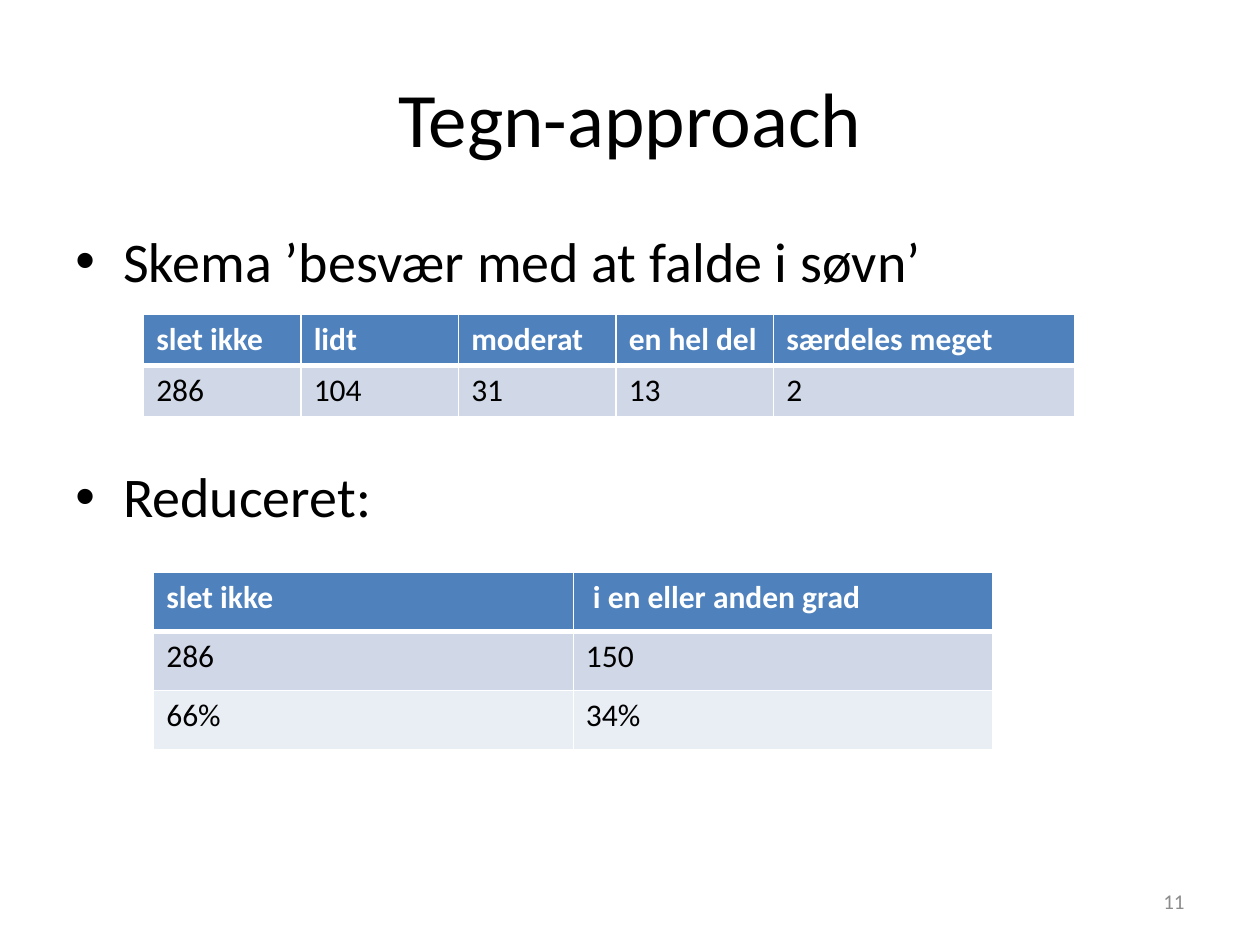
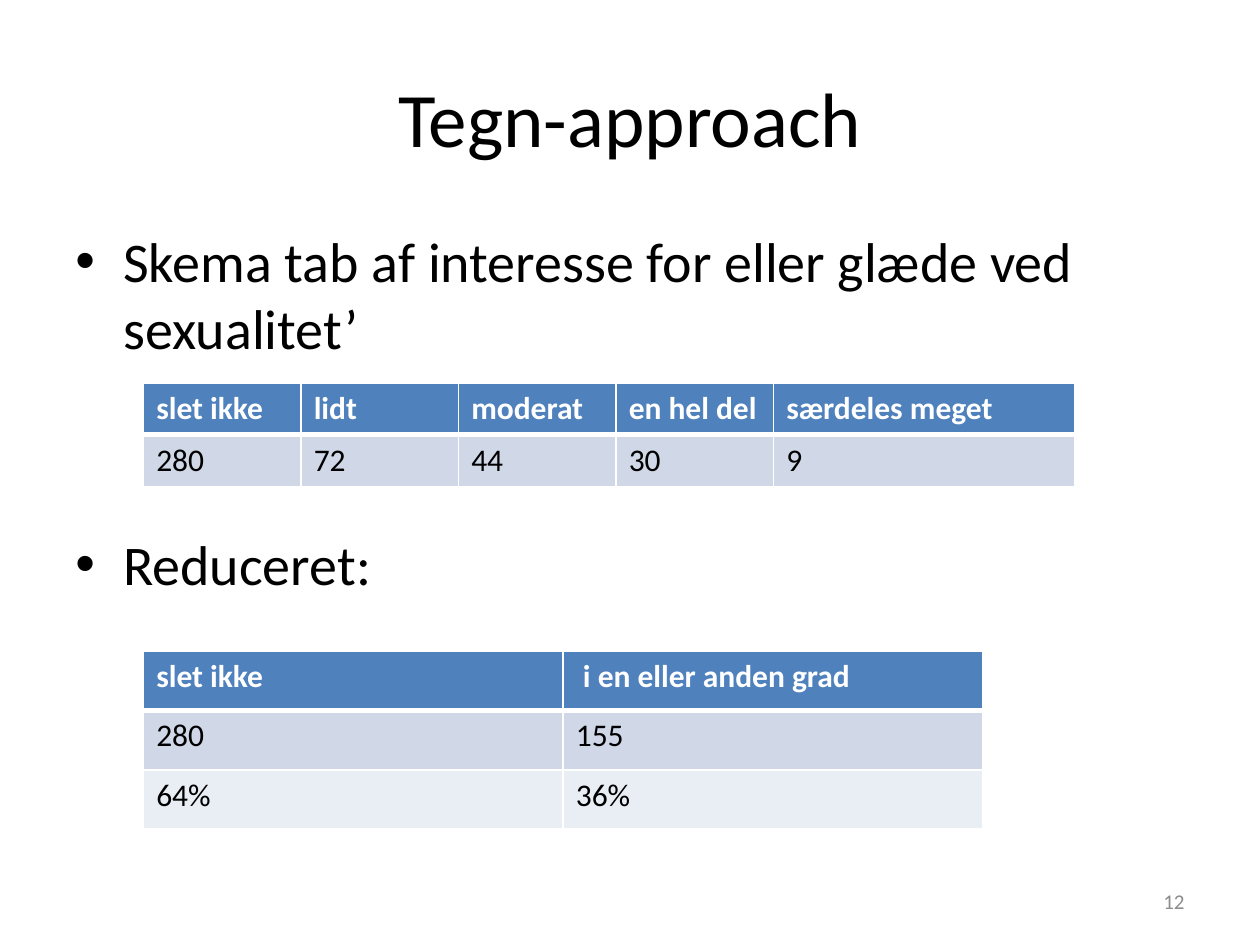
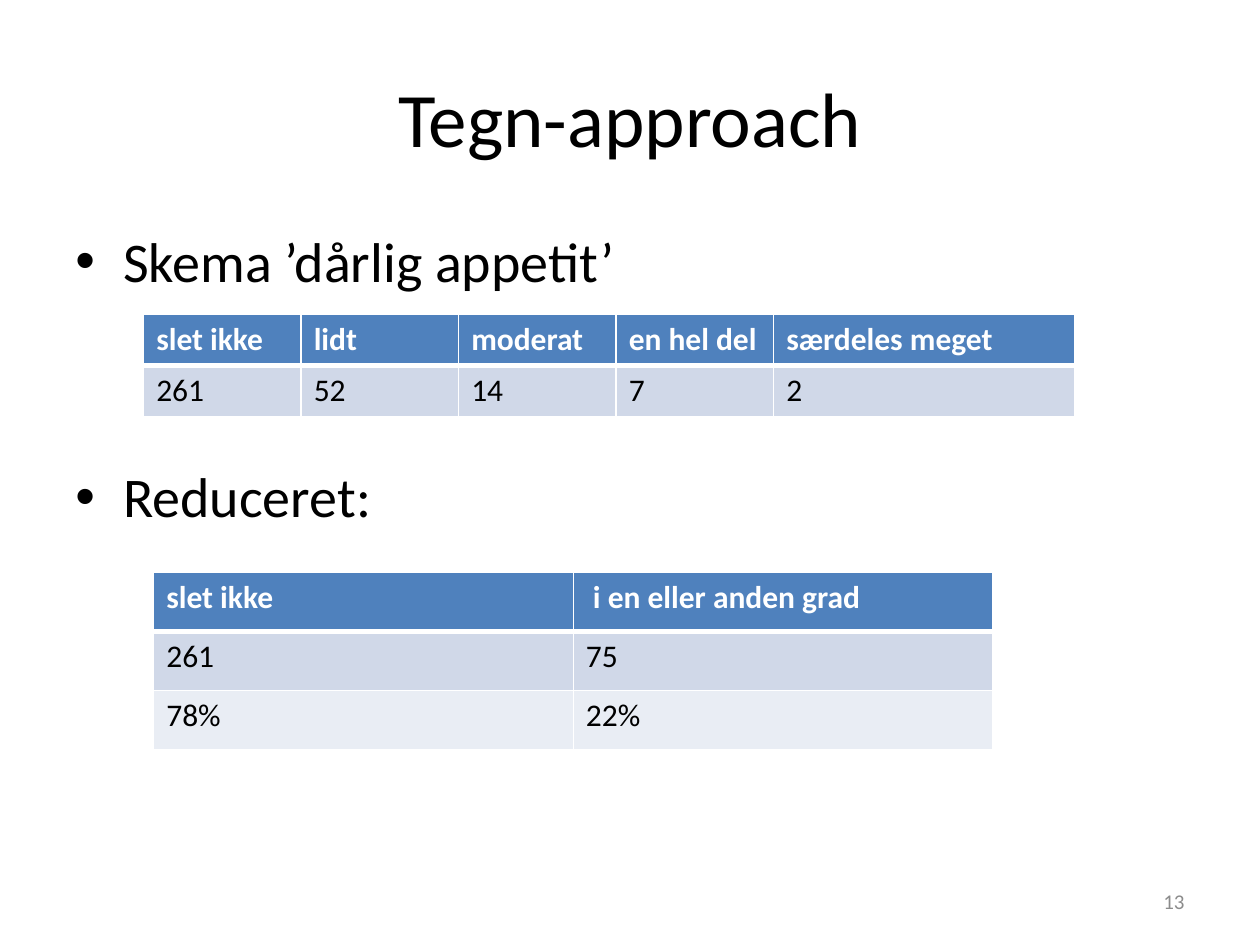
from pptx import Presentation
from pptx.dml.color import RGBColor
from pptx.enum.text import MSO_ANCHOR, PP_ALIGN
from pptx.oxml import parse_xml
from pptx.oxml.ns import nsdecls
from pptx.util import Inches, Pt

FONT = "Calibri"
BLACK, WHITE, GREY = "000000", "FFFFFF", "8C8C8C"
FILLS = ["4F81BD", "D0D8E8", "E9EDF4"]  # header, odd row, even row
LEVELS = ["slet ikke", "lidt", "moderat", "en hel del", "særdeles meget"]
GROUPS = ["slet ikke", " i en eller anden grad"]
FIRST = 11

# item, counts, reduced counts, shares, top of full table, place of reduced table
SLIDES = [
    ("Skema ’besvær med at falde i søvn’", [286, 104, 31, 13, 2],
     [286, 150], ["66%", "34%"], 2.49, (1.22, 4.54)),
    ("Skema tab af interesse for eller glæde ved sexualitet’", [280, 72, 44, 30, 9],
     [280, 155], ["64%", "36%"], 3.04, (1.14, 5.17)),
    ("Skema ’dårlig appetit’", [261, 52, 14, 7, 2],
     [261, 75], ["78%", "22%"], 2.49, (1.22, 4.54)),
]


def write(para, text, size, color=BLACK, bold=False):
    """Add one styled run to a paragraph."""
    run = para.add_run()
    run.text = text
    font = run.font
    font.name, font.size, font.bold = FONT, Pt(size), bold
    font.color.rgb = RGBColor.from_string(color)


def add_grid(slide, left, top, widths, height, rows):
    """Add a table with a blue header, banded rows and white rules."""
    frame = slide.shapes.add_table(len(rows), len(widths), Inches(left), Inches(top),
                                   Inches(sum(widths)), Inches(height * len(rows)))
    table = frame.table
    for col, width in zip(table.columns, widths):
        col.width = Inches(width)
    for r, row in enumerate(rows):
        table.rows[r].height = Inches(height)
        for c, value in enumerate(row):
            cell = table.cell(r, c)
            rules = {"L": 1, "R": 1, "T": 3 if r == 1 else 1, "B": 3 if r == 0 else 1}
            for side, width in rules.items():
                cell._tc.get_or_add_tcPr().append(parse_xml(
                    f'<a:ln{side} {nsdecls("a")} w="{Pt(width)}"><a:solidFill>'
                    f'<a:srgbClr val="{WHITE}"/></a:solidFill></a:ln{side}>'))
            cell.fill.solid()
            cell.fill.fore_color.rgb = RGBColor.from_string(FILLS[r])
            write(cell.text_frame.paragraphs[0], str(value), 18,
                  BLACK if r else WHITE, r == 0)


deck = Presentation()
deck.slide_width, deck.slide_height = Inches(10), Inches(7.5)

for page, (item, counts, sums, shares, top, spot) in enumerate(SLIDES, FIRST):
    slide = deck.slides.add_slide(deck.slide_layouts[6])

    frames = []
    for box, anchor in [((0.5, 0.3, 9, 1.25), MSO_ANCHOR.MIDDLE),
                        ((0.5, 1.75, 9, 4.95), MSO_ANCHOR.TOP),
                        ((7.17, 6.95, 2.33, 0.4), MSO_ANCHOR.MIDDLE)]:
        frame = slide.shapes.add_textbox(*map(Inches, box)).text_frame
        frame.word_wrap, frame.vertical_anchor = True, anchor
        frames.append(frame)
    title, body, foot = frames

    para = title.paragraphs[0]
    para.alignment = PP_ALIGN.CENTER
    write(para, "Tegn-approach", 44)

    para = foot.paragraphs[0]
    para.alignment = PP_ALIGN.RIGHT
    write(para, str(page), 12, GREY)

    # The gap before the second bullet leaves room for the full table
    for para, text, gap in [(body.paragraphs[0], item, 0),
                            (body.add_paragraph(), "Reduceret:", 96)]:
        para.space_before = Pt(gap)
        props = para._p.get_or_add_pPr()
        props.set("marL", str(Inches(0.38)))
        props.set("indent", str(Inches(-0.38)))
        props.append(parse_xml(f'<a:buFont {nsdecls("a")} typeface="Arial"/>'))
        props.append(parse_xml(f'<a:buChar {nsdecls("a")} char="•"/>'))
        write(para, text, 32)

    add_grid(slide, 1.14, top, [1.25] * 4 + [2.39], 0.41, [LEVELS, counts])
    add_grid(slide, *spot, [3.33] * 2, 0.47, [GROUPS, sums, shares])

deck.save("out.pptx")
